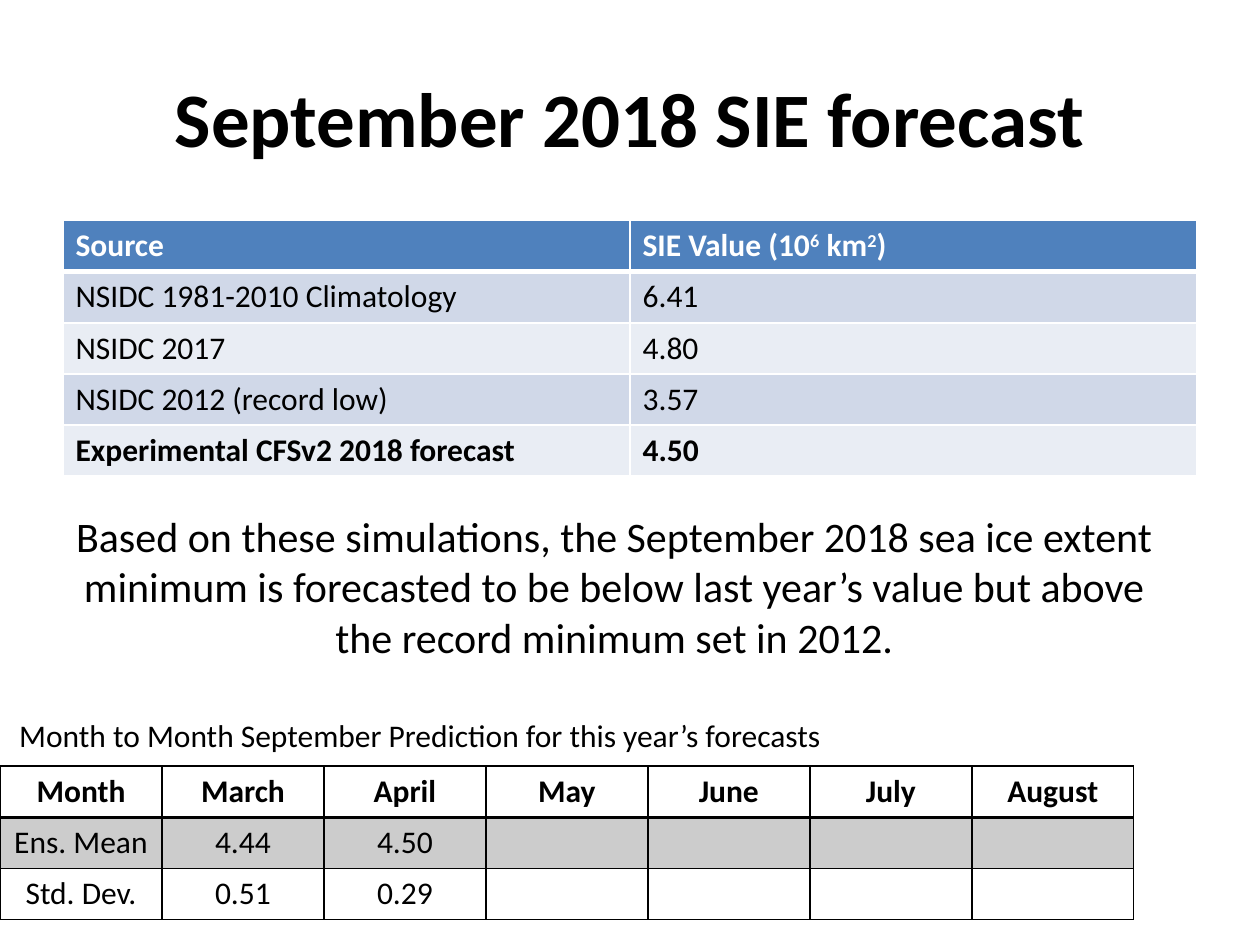
from lxml import etree
from pptx import Presentation
from pptx.dml.color import RGBColor
from pptx.enum.text import MSO_ANCHOR, PP_ALIGN
from pptx.oxml.ns import qn
from pptx.util import Inches, Pt

LEFT, CENTER = PP_ALIGN.LEFT, PP_ALIGN.CENTER
MIDDLE = MSO_ANCHOR.MIDDLE
FONT = "Calibri"
BLACK = RGBColor(0x00, 0x00, 0x00)
WHITE = RGBColor(0xFF, 0xFF, 0xFF)
HEADER_BLUE = RGBColor(0x4F, 0x81, 0xBD)
BAND_DARK = RGBColor(0xD0, 0xD8, 0xE8)
BAND_LIGHT = RGBColor(0xE9, 0xED, 0xF4)
ROW_HEIGHT = 0.406


def format_text(frame, size, color=BLACK, bold=False, align=CENTER):
    for para in frame.paragraphs:
        para.alignment = align
        for run in para.runs:
            run.font.name = FONT
            run.font.size = Pt(size)
            run.font.bold = bold
            run.font.color.rgb = color


def set_borders(cell, color, bottom_width):
    """Draw 1 pt lines on three sides and bottom_width points below; call before filling."""
    properties = cell._tc.get_or_add_tcPr()
    for side, width in (("L", 1), ("R", 1), ("T", 1), ("B", bottom_width)):
        line = etree.SubElement(properties, qn(f"a:ln{side}"), w=str(Pt(width)))
        fill = etree.SubElement(line, qn("a:solidFill"))
        etree.SubElement(fill, qn("a:srgbClr"), val=str(color))


deck = Presentation()
deck.slide_width, deck.slide_height = Inches(10), Inches(7.5)
page = deck.slides.add_slide(deck.slide_layouts[5])

title = page.shapes.title
title.left, title.top = Inches(0.5), Inches(0.3)
title.width, title.height = Inches(9), Inches(1.25)
title.text_frame.text = "September 2018 SIE forecast"
title.text_frame.vertical_anchor = MIDDLE
format_text(title.text_frame, 44, bold=True)

# Sea ice extent by source
source_rows = [
    ("Source", ""),
    ("NSIDC 1981-2010 Climatology", "6.41"),
    ("NSIDC 2017", "4.80"),
    ("NSIDC 2012 (record low)", "3.57"),
    ("Experimental CFSv2 2018 forecast", "4.50"),
]
unit_parts = [("SIE Value (10", False), ("6", True), (" km", False), ("2", True), (")", False)]

source_table = page.shapes.add_table(
    len(source_rows), 2, Inches(0.5), Inches(1.75),
    Inches(9), Inches(ROW_HEIGHT * len(source_rows))).table
source_table.first_row = source_table.horz_banding = False
for part, raised in unit_parts:
    run = source_table.cell(0, 1).text_frame.paragraphs[0].add_run()
    run.text = part
    if raised:
        run._r.get_or_add_rPr().set("baseline", "30000")

for r, values in enumerate(source_rows):
    is_header, is_forecast = r == 0, r == len(source_rows) - 1
    for c, value in enumerate(values):
        cell = source_table.cell(r, c)
        if value:
            cell.text_frame.text = value
        format_text(cell.text_frame, 18, WHITE if is_header else BLACK,
                    is_header or is_forecast, LEFT)
        set_borders(cell, WHITE, 3 if is_header else 1)
        cell.fill.solid()
        band = BAND_DARK if r % 2 else BAND_LIGHT
        cell.fill.fore_color.rgb = HEADER_BLUE if is_header else band

# Conclusion and caption of the monthly table
for text, left, top, width, height, size in (
    ("Based on these simulations, the September 2018 sea ice extent minimum is forecasted "
     "to be below last year’s value but above the record minimum set in 2012.",
     0.5, 4, 8.75, 1.31, 24),
    ("Month to Month September Prediction for this year’s forecasts",
     0, 5.63, 6.67, 0.4, 18),
):
    box = page.shapes.add_textbox(Inches(left), Inches(top), Inches(width), Inches(height))
    box.text_frame.word_wrap = True
    box.text_frame.text = text
    format_text(box.text_frame, size)

# Prediction by month; the coming months are still empty
month_rows = [
    ("Month", "March", "April", "May", "June", "July", "August"),
    ("Ens. Mean", "4.44", "4.50", "", "", "", ""),
    ("Std. Dev.", "0.51", "0.29", "", "", "", ""),
]
month_table = page.shapes.add_table(
    len(month_rows), len(month_rows[0]), Inches(0), Inches(6.08),
    Inches(9), Inches(ROW_HEIGHT * len(month_rows))).table
month_table.first_row = month_table.horz_banding = False

for r, values in enumerate(month_rows):
    for c, value in enumerate(values):
        cell = month_table.cell(r, c)
        cell.text_frame.text = value
        format_text(cell.text_frame, 18, bold=r == 0)
        set_borders(cell, BLACK, 2 if r == 0 else 1)
        if r == 1:
            cell.fill.solid()
            cell.fill.fore_color.rgb = BLACK
            shade = cell._tc.tcPr.find(qn("a:solidFill")).find(qn("a:srgbClr"))
            etree.SubElement(shade, qn("a:alpha"), val="20000")
        else:
            cell.fill.background()

deck.save("out.pptx")
